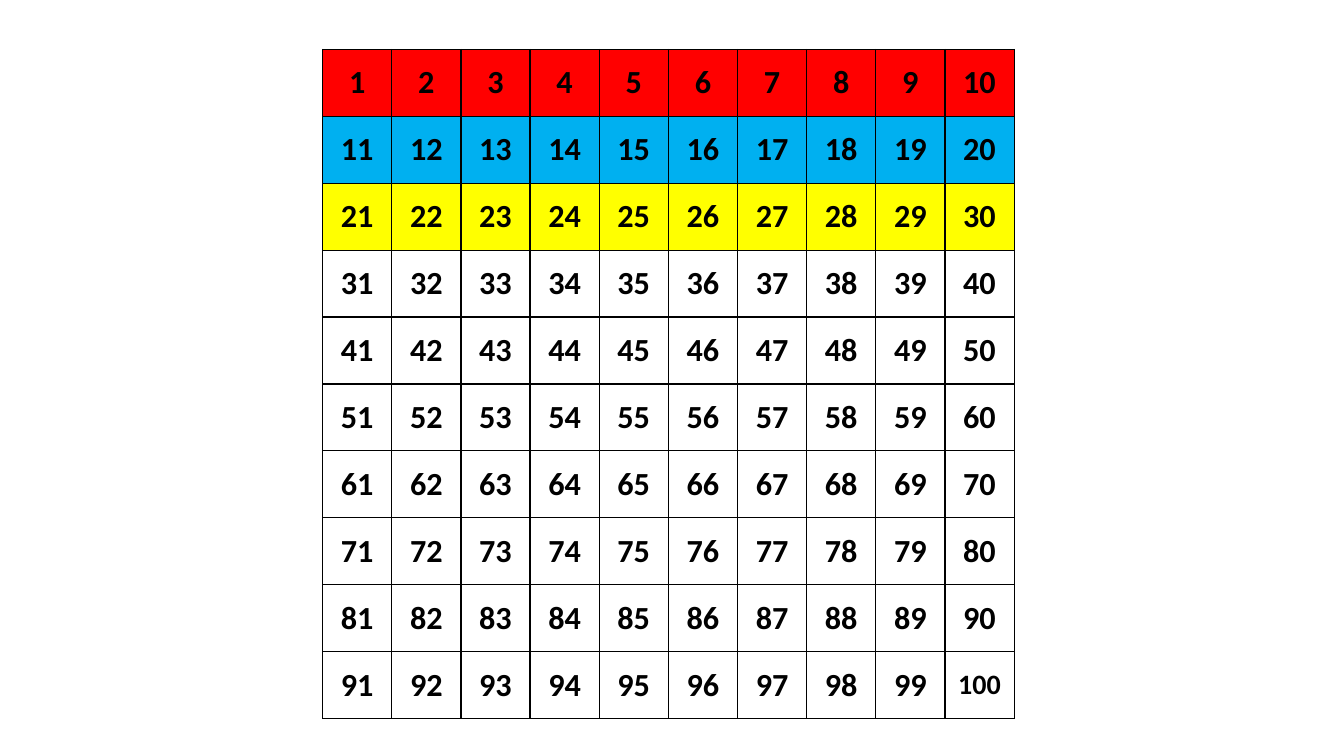
from dataclasses import dataclass

from lxml import etree
from pptx import Presentation
from pptx.dml.color import RGBColor
from pptx.enum.text import MSO_ANCHOR, PP_ALIGN
from pptx.oxml.ns import qn
from pptx.util import Inches, Pt

MIDDLE = MSO_ANCHOR.MIDDLE
CENTER = PP_ALIGN.CENTER
BLANK_LAYOUT = 6
SIDES = ("a:lnL", "a:lnR", "a:lnT", "a:lnB")


@dataclass(frozen=True)
class Theme:
    """Colours, type sizes and grid measures of the number chart."""

    font: str = "Calibri"
    ink: str = "000000"
    row_fills: tuple = ("FF0000", "00B0F0", "FFFF00")
    number_size: int = 23
    long_number_size: int = 20
    border_width: int = 1
    slide_width: float = 13.33
    slide_height: float = 7.5
    grid_left: float = 3.2
    grid_top: float = 0.49
    grid_width: float = 6.86
    grid_height: float = 6.64
    divisions: int = 10
    side_inset: float = 0.13
    end_inset: float = 0.06


class ChartSlide:
    """Draws styled elements on one slide, placed by grid columns and rows."""

    def __init__(self, slide, theme):
        """Keep the slide and its theme."""
        self.slide = slide
        self.theme = theme

    def columns(self, count):
        """Return the width of a number of grid columns."""
        return Inches(self.theme.grid_width * count / self.theme.divisions)

    def rows(self, count):
        """Return the height of a number of grid rows."""
        return Inches(self.theme.grid_height * count / self.theme.divisions)

    def number_table(self, numbers):
        """Add a table with one grid square for each number."""
        row_count, column_count = len(numbers), len(numbers[0])
        table = self.slide.shapes.add_table(
            row_count, column_count,
            Inches(self.theme.grid_left), Inches(self.theme.grid_top),
            self.columns(column_count), self.rows(row_count),
        ).table
        table.first_row = table.horz_banding = False
        for column in table.columns:
            column.width = self.columns(1)
        for row_index, row_numbers in enumerate(numbers):
            table.rows[row_index].height = self.rows(1)
            fill = dict(enumerate(self.theme.row_fills)).get(row_index)
            for column_index, number in enumerate(row_numbers):
                square = table.cell(row_index, column_index)
                self.border(square)
                self.fill(square, fill)
                self.label(square, number)

    def border(self, square):
        """Draw a solid line on each side of a square."""
        properties = square._tc.get_or_add_tcPr()
        for side in SIDES:
            line = etree.SubElement(properties, qn(side), w=str(Pt(self.theme.border_width)))
            solid = etree.SubElement(line, qn("a:solidFill"))
            etree.SubElement(solid, qn("a:srgbClr"), val=self.theme.ink)

    def fill(self, square, color):
        """Fill a square, or leave it clear when it has no colour."""
        if color is None:
            square.fill.background()
        else:
            square.fill.solid()
            square.fill.fore_color.rgb = RGBColor.from_string(color)

    def label(self, square, number):
        """Write a centred bold number in a square."""
        theme = self.theme
        square.vertical_anchor = MIDDLE
        square.margin_left = square.margin_right = Inches(theme.side_inset)
        square.margin_top = square.margin_bottom = Inches(theme.end_inset)
        paragraph = square.text_frame.paragraphs[0]
        paragraph.text = str(number)
        paragraph.alignment = CENTER
        font = paragraph.runs[0].font
        font.name = theme.font
        font.size = Pt(theme.number_size if number < 100 else theme.long_number_size)
        font.bold = True
        font.color.rgb = RGBColor.from_string(theme.ink)


def main():
    """Build and save the hundred chart."""
    theme = Theme()
    deck = Presentation()
    deck.slide_width = Inches(theme.slide_width)
    deck.slide_height = Inches(theme.slide_height)
    chart_slide = ChartSlide(deck.slides.add_slide(deck.slide_layouts[BLANK_LAYOUT]), theme)
    size = theme.divisions
    chart_slide.number_table(
        [range(start, start + size) for start in range(1, size * size + 1, size)]
    )
    deck.save("out.pptx")


if __name__ == "__main__":
    main()
